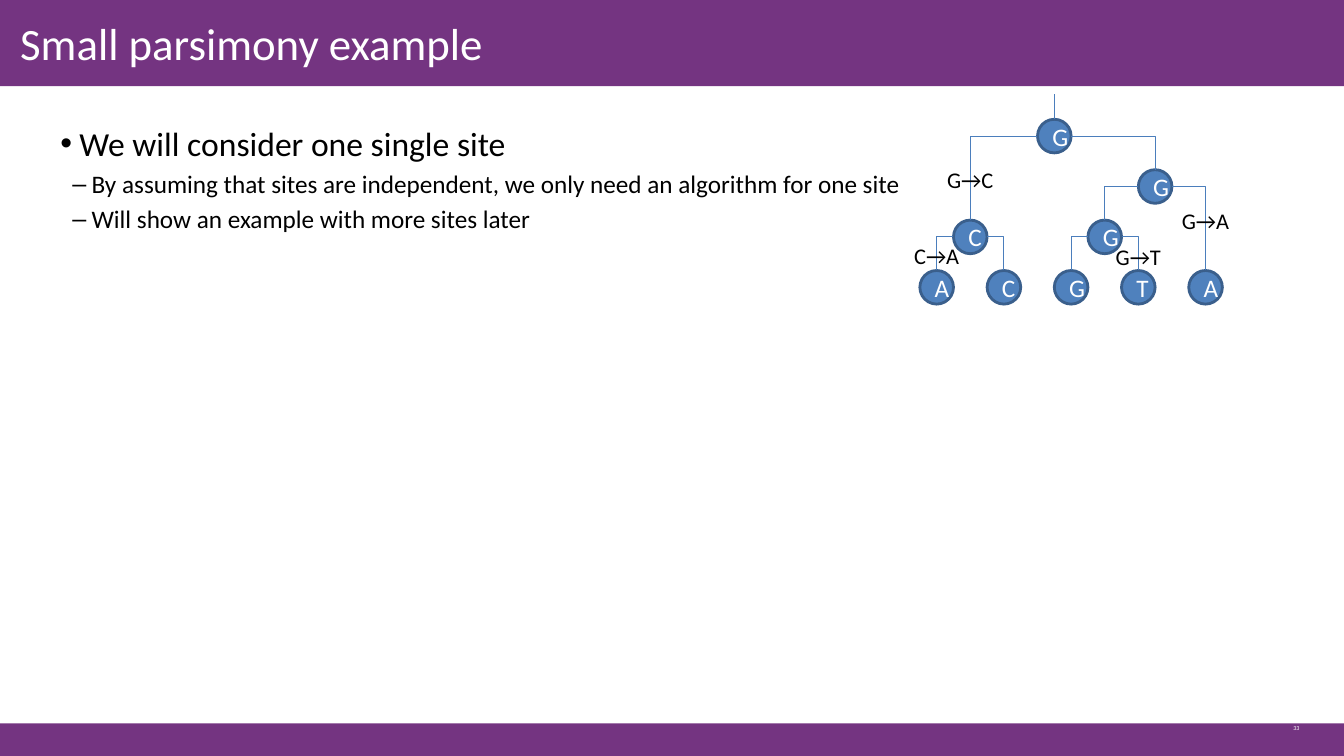
"""Build the small parsimony example slide with its labelled tree."""
from dataclasses import dataclass

from lxml.etree import SubElement as Sub
from pptx import Presentation
from pptx.dml.color import RGBColor as Rgb
from pptx.enum.shapes import MSO_CONNECTOR as Link, MSO_SHAPE as Form
from pptx.enum.text import MSO_ANCHOR as Anchor, MSO_AUTO_SIZE as Fit, PP_ALIGN as Align
from pptx.oxml.ns import qn
from pptx.util import Inches, Pt

HUES = {"bar": "743481", "node": "4F81BD", "rim": "3A5F8C",
        "edge": "4B7EBC", "white": "FFFFFF", "black": "000000"}
WIDE, HIGH = Inches(13.33), Inches(7.5)
LEFT, TOP = Inches(9.29), Inches(1.35)
COL, ROW = Inches(2 / 3), Inches(0.5)
SIZE = COL // 2


@dataclass(frozen=True)
class Node:
    name: str
    base: str
    col: float
    row: float
    up: str = ""


@dataclass(frozen=True)
class Change:
    text: str
    col: float
    row: float


@dataclass(frozen=True)
class Item:
    text: str
    mark: str
    size: int
    left: float
    gap: float


NODES = [
    Node("root", "G", 1.75, 0),
    Node("right", "G", 3.25, 1, "root"),
    Node("left", "C", 0.5, 2, "root"),
    Node("mid", "G", 2.5, 2, "right"),
    Node("leaf1", "A", 0, 3, "left"),
    Node("leaf2", "C", 1, 3, "left"),
    Node("leaf3", "G", 2, 3, "mid"),
    Node("leaf4", "T", 3, 3, "mid"),
    Node("leaf5", "A", 4, 3, "right"),
]
CHANGES = [
    Change("C→A", 0, 2.37),
    Change("G→C", 0.5, 0.87),
    Change("G→A", 4, 1.69),
    Change("G→T", 3, 2.39),
]
ITEMS = [
    Item("We will consider one single site", "•", 24, 0.19, 0),
    Item("By assuming that sites are independent, we only need an algorithm for one site",
         "–", 18, 0.31, 3.6),
    Item("Will show an example with more sites later", "–", 18, 0.31, 3.6),
]


def hue(key: str) -> Rgb:
    return Rgb.from_string(HUES[key])


def spot(col: float, row: float) -> tuple[int, int]:
    return LEFT + round(col * COL), TOP + round(row * ROW)


def style(para, size: float, key: str) -> None:
    for run in para.runs:
        run.font.name = "Calibri"
        run.font.size = Pt(size)
        run.font.color.rgb = hue(key)


def bar(slide, top: float, high: float) -> None:
    box = slide.shapes.add_shape(Form.RECTANGLE, 0, round(top * HIGH), WIDE, round(high * HIGH))
    box.shadow.inherit = False
    box.fill.solid()
    box.fill.fore_color.rgb = hue("bar")
    box.line.fill.background()


def head(slide, text: str) -> None:
    title = slide.shapes.title
    title.element.getparent().append(title.element)
    title.left, title.top = 0, Inches(-0.01)
    title.width, title.height = Inches(10.42), Inches(0.86)
    frame = title.text_frame
    frame.text = text
    frame.auto_size = Fit.NONE
    frame.vertical_anchor = Anchor.MIDDLE
    frame.margin_left = Inches(0.2)
    frame.paragraphs[0].alignment = Align.LEFT
    style(frame.paragraphs[0], 32, "white")


def points(slide, items: list[Item]) -> None:
    box = slide.shapes.add_textbox(Inches(0.5), Inches(1.17), Inches(12), Inches(5.53))
    frame = box.text_frame
    frame.word_wrap = True
    for num, item in enumerate(items):
        para = frame.add_paragraph() if num else frame.paragraphs[0]
        para.text = item.text
        para.space_before = Pt(item.gap)
        props = para._p.get_or_add_pPr()
        props.set("marL", str(Inches(item.left)))
        props.set("indent", str(Inches(-0.19)))
        Sub(props, qn("a:buFont"), typeface="Arial")
        Sub(props, qn("a:buChar"), char=item.mark)
        style(para, item.size, "black")


def circle(slide, node: Node):
    x, y = spot(node.col, node.row)
    disc = slide.shapes.add_shape(Form.OVAL, x - SIZE // 2, y - SIZE // 2, SIZE, SIZE)
    disc.shadow.inherit = False
    disc.fill.solid()
    disc.fill.fore_color.rgb = hue("node")
    disc.line.color.rgb = hue("rim")
    disc.line.width = Pt(2)
    disc.text_frame.text = node.base
    disc.text_frame.paragraphs[0].alignment = Align.CENTER
    style(disc.text_frame.paragraphs[0], 18, "white")
    return disc


def wire(slide, kind: Link, start: tuple[int, int], end: tuple[int, int]):
    line = slide.shapes.add_connector(kind, *start, *end)
    line.line.color.rgb = hue("edge")
    line.line.width = Pt(0.75)
    Sub(line.element.spPr, qn("a:effectLst"))
    return line


def branch(slide, up: Node, node: Node) -> None:
    x, y = spot(up.col, up.row)
    side = SIZE // 2 if node.col > up.col else -SIZE // 2
    cx, cy = spot(node.col, node.row)
    line = wire(slide, Link.ELBOW, (x + side, y), (cx, cy - SIZE // 2))
    line.element.spPr.find(qn("a:prstGeom")).set("prst", "bentConnector2")


def tree(slide, nodes: list[Node]) -> None:
    known = {node.name: node for node in nodes}
    discs = {node.name: circle(slide, node) for node in nodes}
    for node in nodes:
        if node.up:
            branch(slide, known[node.up], node)
    x, y = spot(nodes[0].col, nodes[0].row)
    stem = wire(slide, Link.STRAIGHT, (x, y - SIZE // 2), (x, Inches(0.93)))
    stem.begin_connect(discs["root"], 0)


def label(slide, change: Change) -> None:
    x, y = spot(change.col, change.row)
    wide, high = Inches(0.68), Inches(0.37)
    box = slide.shapes.add_textbox(x - wide // 2, y - high // 2, wide, high)
    frame = box.text_frame
    frame.text = change.text
    frame.word_wrap = False
    frame.auto_size = Fit.SHAPE_TO_FIT_TEXT
    frame.paragraphs[0].alignment = Align.CENTER
    style(frame.paragraphs[0], 16, "black")


def number(slide, text: str) -> None:
    box = slide.shapes.add_textbox(Inches(12.73), Inches(7.14), Inches(0.65), Inches(0.4))
    box.text_frame.text = text
    box.text_frame.word_wrap = True
    style(box.text_frame.paragraphs[0], 4.3, "white")


def main() -> None:
    deck = Presentation()
    deck.slide_width, deck.slide_height = WIDE, HIGH
    slide = deck.slides.add_slide(deck.slide_layouts[5])
    bar(slide, 0.957, 0.044)
    bar(slide, -0.001, 0.115)
    head(slide, "Small parsimony example")
    number(slide, "33")
    points(slide, ITEMS)
    tree(slide, NODES)
    for change in CHANGES:
        label(slide, change)
    deck.save("out.pptx")


if __name__ == "__main__":
    main()
